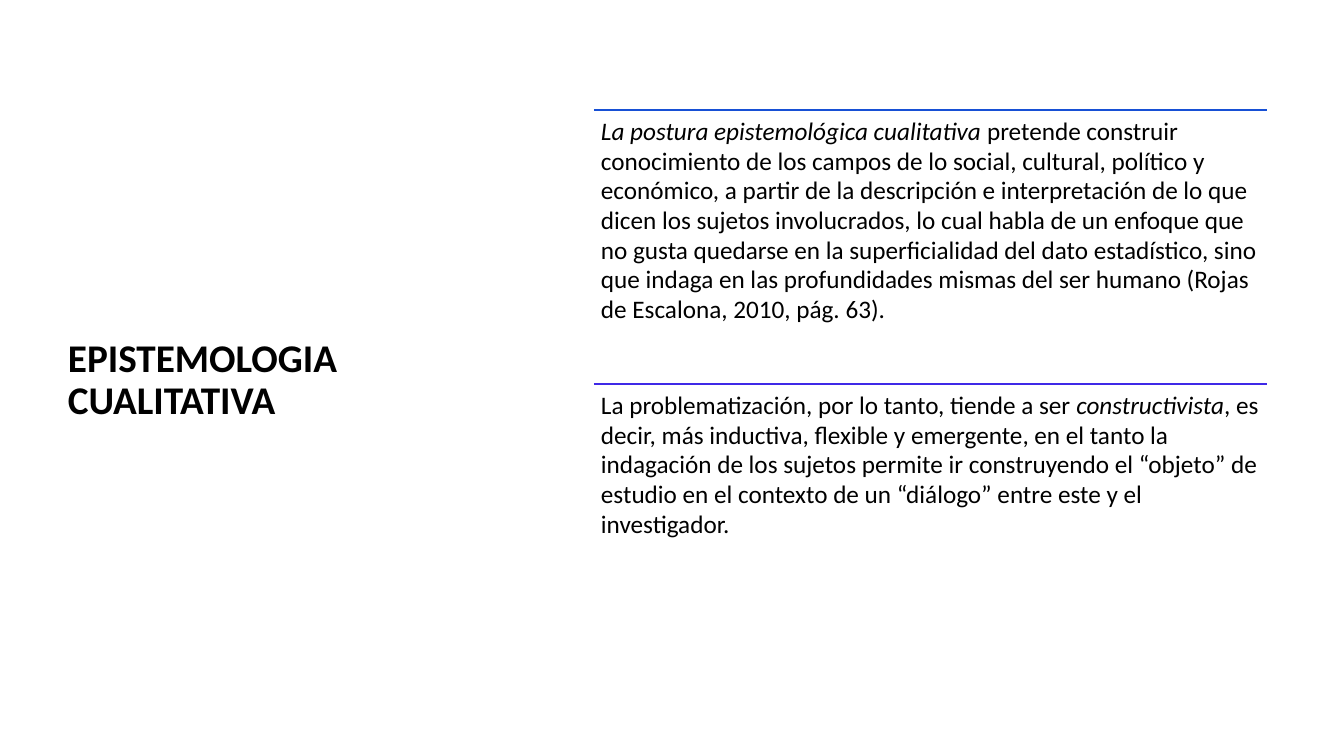
from pptx import Presentation
from pptx.dml.color import RGBColor as RGB
from pptx.enum.shapes import MSO_CONNECTOR as Conn
from pptx.enum.text import MSO_ANCHOR as Anchor
from pptx.oxml.ns import qn
from pptx.util import Pt
from lxml import etree

PX = 12192000 / 1344
FONT = "Calibri"
COLORS = {"text": "000000", "blue": "1750D5", "violet": "3F29E7"}


def px(n):
    return round(n * PX)


def style(run, size, bold=False, italic=False):
    font = run.font
    font.name, font.size = FONT, Pt(size)
    font.bold, font.italic = bold, italic
    font.color.rgb = RGB.from_string(COLORS["text"])


deck = Presentation()
deck.slide_width, deck.slide_height = px(1344), px(756)
slide = deck.slides.add_slide(deck.slide_layouts[6])
shapes = slide.shapes

# Title
title = shapes.add_textbox(px(58), px(180), px(385), px(401)).text_frame
title.word_wrap = True
title.vertical_anchor = Anchor.MIDDLE
title.text = "EPISTEMOLOGIA CUALITATIVA"
title.paragraphs[0].line_spacing = 0.9
style(title.paragraphs[0].runs[0], 28, bold=True)

# Ruled passages: line color, then (text, italic) parts
passages = [
    ("blue", [
        ("La postura epistemológica cualitativa ", True),
        ("pretende construir conocimiento de los campos de lo social, "
         "cultural, político y económico, a partir de la descripción e "
         "interpretación de lo que dicen los sujetos involucrados, lo cual "
         "habla de un enfoque que no gusta quedarse en la superficialidad "
         "del dato estadístico, sino que indaga en las profundidades mismas "
         "del ser humano (Rojas de Escalona, 2010, pág. 63).", False),
    ]),
    ("violet", [
        ("La problematización, por lo tanto, tiende a ser ", False),
        ("constructivista", True),
        (", es decir, más inductiva, flexible y emergente, en el tanto la "
         "indagación de los sujetos permite ir construyendo el “objeto” de "
         "estudio en el contexto de un “diálogo” entre este y el "
         "investigador.", False),
    ]),
]
LEFT, TOP, WIDTH, HEIGHT = 594, 110, 673, 274

for i, (color, parts) in enumerate(passages):
    top = TOP + i * HEIGHT

    # Rule above the passage
    rule = shapes.add_connector(Conn.STRAIGHT, px(LEFT), px(top),
                                px(LEFT + WIDTH), px(top))
    rule.line.color.rgb = RGB.from_string(COLORS[color])
    rule.line.width = Pt(1)
    etree.SubElement(rule._element.spPr, qn("a:effectLst"))

    # Passage text
    frame = shapes.add_textbox(px(LEFT), px(top), px(WIDTH),
                               px(HEIGHT)).text_frame
    frame.word_wrap = True
    frame.margin_left = frame.margin_right = px(7)
    frame.margin_top = frame.margin_bottom = px(7)
    para = frame.paragraphs[0]
    para.line_spacing = 0.98
    for text, italic in parts:
        run = para.add_run()
        run.text = text
        style(run, 18, italic=italic)

deck.save("out.pptx")
